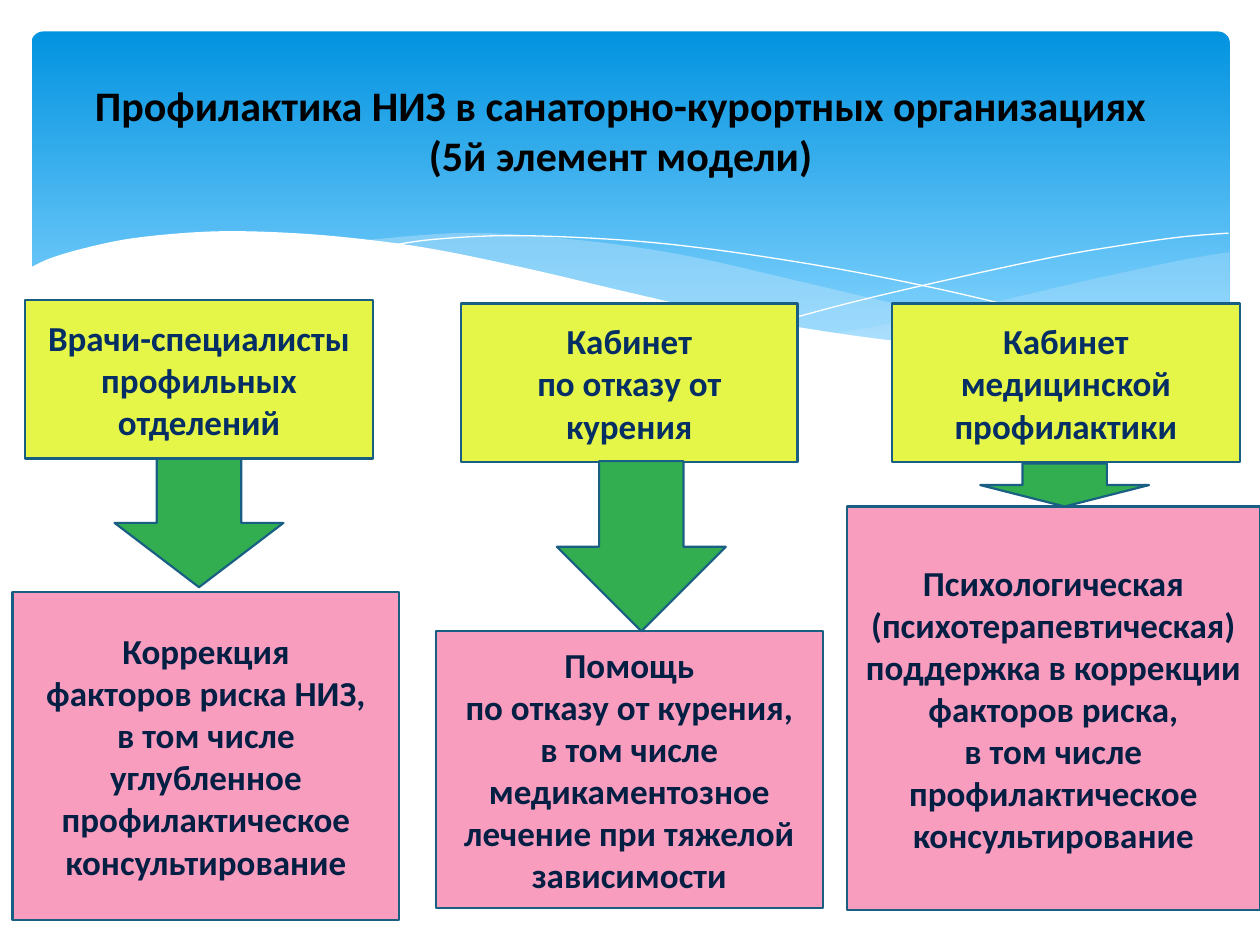
from dataclasses import dataclass

from lxml import etree
from pptx import Presentation
from pptx.dml.color import RGBColor
from pptx.enum.shapes import MSO_SHAPE
from pptx.enum.text import MSO_ANCHOR, PP_ALIGN
from pptx.oxml.ns import qn
from pptx.util import Inches, Pt

RECTANGLE = MSO_SHAPE.RECTANGLE
ROUNDED = MSO_SHAPE.ROUNDED_RECTANGLE
DOWN_ARROW = MSO_SHAPE.DOWN_ARROW
MIDDLE = MSO_ANCHOR.MIDDLE
CENTER = PP_ALIGN.CENTER


@dataclass(frozen=True)
class Theme:
    font: str = "Calibri"
    title_size: int = 24
    body_size: int = 20
    line_width: float = 1.25
    title: str = "000000"
    unit_text: str = "052E65"
    task_text: str = "041F44"
    unit_fill: str = "E5F648"
    task_fill: str = "F99DBE"
    arrow_fill: str = "32AE51"
    outline: str = "195F84"
    banner_top: str = "0293E0"
    banner_bottom: str = "83D3FE"
    wave: str = "C6E7FC"
    white: str = "FFFFFF"


def smooth(knots, steps=6):
    ends = [knots[0], *knots, knots[-1]]
    points = [knots[0]]
    for a, b, c, d in zip(ends, ends[1:], ends[2:], ends[3:]):
        for step in range(1, steps + 1):
            t = step / steps
            points.append(tuple(
                (2 * q + (r - p) * t + (2 * p - 5 * q + 4 * r - s) * t ** 2
                 + (3 * q - p - 3 * r + s) * t ** 3) / 2
                for p, q, r, s in zip(a, b, c, d)))
    return points


class SlideBuilder:
    def __init__(self, page, theme):
        self.page = page
        self.theme = theme

    def paint(self, shape, color, opacity=100):
        shape.fill.solid()
        shape.fill.fore_color.rgb = RGBColor.from_string(color)
        if opacity < 100:
            tint = next(shape.element.spPr.iter(qn("a:srgbClr")))
            etree.SubElement(tint, qn("a:alpha"), val=str(opacity * 1000))

    def shape(self, kind, at, color):
        shape = self.page.shapes.add_shape(kind, *map(Inches, at))
        shape.shadow.inherit = False
        self.paint(shape, color)
        shape.line.color.rgb = RGBColor.from_string(self.theme.outline)
        shape.line.width = Pt(self.theme.line_width)
        return shape

    def label(self, shape, lines, size, color):
        frame = shape.text_frame
        frame.word_wrap = True
        frame.vertical_anchor = MIDDLE
        frame.text = "\n".join(lines)
        for para in frame.paragraphs:
            para.alignment = CENTER
            para.font.name = self.theme.font
            para.font.size = Pt(size)
            para.font.bold = True
            para.font.color.rgb = RGBColor.from_string(color)

    def title(self, at, text):
        box = self.page.shapes.add_textbox(*map(Inches, at))
        self.label(box, [text], self.theme.title_size, self.theme.title)

    def box(self, at, lines, fill, color):
        shape = self.shape(RECTANGLE, at, fill)
        self.label(shape, lines, self.theme.body_size, color)

    def arrow(self, at):
        self.shape(DOWN_ARROW, at, self.theme.arrow_fill)

    def banner(self, at):
        shape = self.shape(ROUNDED, at, self.theme.banner_top)
        shape.adjustments[0] = 0.034
        shape.line.fill.background()
        shape.fill.gradient()
        shape.fill.gradient_angle = 270
        top, bottom = shape.fill.gradient_stops
        top.color.rgb = RGBColor.from_string(self.theme.banner_top)
        top.position = 0
        bottom.color.rgb = RGBColor.from_string(self.theme.banner_bottom)
        bottom.position = 0.9

    def outline(self, points, close):
        start, *rest = [tuple(map(Inches, point)) for point in points]
        builder = self.page.shapes.build_freeform(*start)
        builder.add_line_segments(rest, close=close)
        shape = builder.convert_to_shape()
        shape.shadow.inherit = False
        return shape

    def wave(self, edges, color, opacity=100):
        points = [point for edge in edges for point in smooth(edge)]
        shape = self.outline(points, True)
        self.paint(shape, color, opacity)
        shape.line.fill.background()

    def curve(self, knots):
        shape = self.outline(smooth(knots), False)
        shape.fill.background()
        shape.line.color.rgb = RGBColor.from_string(self.theme.white)
        shape.line.width = Pt(0)


RIGHT_WAVE = [
    [(9.76, 2), (9.35, 2.07), (8.61, 2.23), (7.79, 2.42), (7.06, 2.57), (6.61, 2.65)],
    [(6.61, 2.65), (7.05, 2.71), (7.57, 2.76), (8.03, 2.78), (8.54, 2.76),
     (8.97, 2.7), (9.35, 2.62), (9.76, 2.47)],
]
MIDDLE_WAVE = [
    [(8.93, 2.73), (8.37, 2.65), (7.75, 2.54), (7.06, 2.4), (6.29, 2.22),
     (5.55, 2.05), (4.89, 1.94), (4.2, 1.87), (3.61, 1.85), (2.86, 1.91)],
    [(2.86, 1.91), (3.42, 1.99), (4.04, 2.11), (4.91, 2.32), (5.66, 2.48),
     (6.34, 2.61), (6.95, 2.7), (7.48, 2.76), (8.07, 2.78), (8.57, 2.77), (8.93, 2.73)],
]
FRONT_WAVE = [
    [(9.77, 2.46), (9.3, 2.62), (8.75, 2.73), (8.09, 2.77), (7.44, 2.74),
     (6.68, 2.65), (5.79, 2.5), (5.03, 2.33), (4.18, 2.13), (3.4, 1.97),
     (2.71, 1.88), (2.11, 1.84), (1.61, 1.84), (1.06, 1.89), (0.67, 1.97),
     (0.4, 2.05), (0.23, 2.13)],
    [(0.23, 3.29), (9.77, 3.29)],
]
FALLING_CURVE = [(3.09, 1.95), (3.44, 1.9), (4.01, 1.87), (4.69, 1.89), (5.33, 1.94),
                 (6.08, 2.04), (6.95, 2.19), (7.95, 2.41), (9.07, 2.72)]
RISING_CURVE = [(6.13, 2.57), (6.72, 2.41), (7.48, 2.23), (8.36, 2.04),
                (8.95, 1.94), (9.38, 1.88), (9.75, 1.85)]

COLUMNS = [
    ((0.2, 2.38, 2.76, 1.26), ["Врачи-специалисты", "профильных", "отделений"],
     (0.1, 4.7, 3.07, 2.6),
     ["Коррекция", "факторов риска НИЗ,", "в том числе углубленное",
      "профилактическое", "консультирование"],
     (0.91, 3.64, 1.34, 1.02)),
    ((3.66, 2.41, 2.67, 1.26), ["Кабинет", "по отказу от курения"],
     (3.46, 5.01, 3.07, 2.2),
     ["Помощь", "по отказу от курения,", "в том числе", "медикаментозное",
      "лечение при тяжелой", "зависимости"],
     (4.42, 3.66, 1.34, 1.35)),
    ((7.08, 2.41, 2.76, 1.26), ["Кабинет", "медицинской", "профилактики"],
     (6.72, 4.02, 3.28, 3.2),
     ["Психологическая", "(психотерапевтическая)", "поддержка в коррекции",
      "факторов риска,", "в том числе", "профилактическое", "консультирование"],
     (7.78, 3.68, 1.34, 0.34)),
]


def main():
    deck = Presentation()
    deck.slide_width, deck.slide_height = Inches(10), Inches(7.5)
    theme = Theme()
    slide = SlideBuilder(deck.slides.add_slide(deck.slide_layouts[6]), theme)

    slide.banner((0.25, 0.25, 9.51, 2.7))
    slide.wave(RIGHT_WAVE, theme.wave, 29)
    slide.wave(MIDDLE_WAVE, theme.wave, 40)
    slide.curve(FALLING_CURVE)
    slide.curve(RISING_CURVE)
    slide.wave(FRONT_WAVE, theme.white)

    slide.title((0.2, 0.52, 9.45, 1.02),
                "Профилактика НИЗ в санаторно-курортных организациях\v(5й элемент модели)")
    for unit_at, unit, task_at, task, arrow_at in COLUMNS:
        slide.box(unit_at, unit, theme.unit_fill, theme.unit_text)
        slide.box(task_at, task, theme.task_fill, theme.task_text)
        slide.arrow(arrow_at)

    deck.save("out.pptx")


if __name__ == "__main__":
    main()
